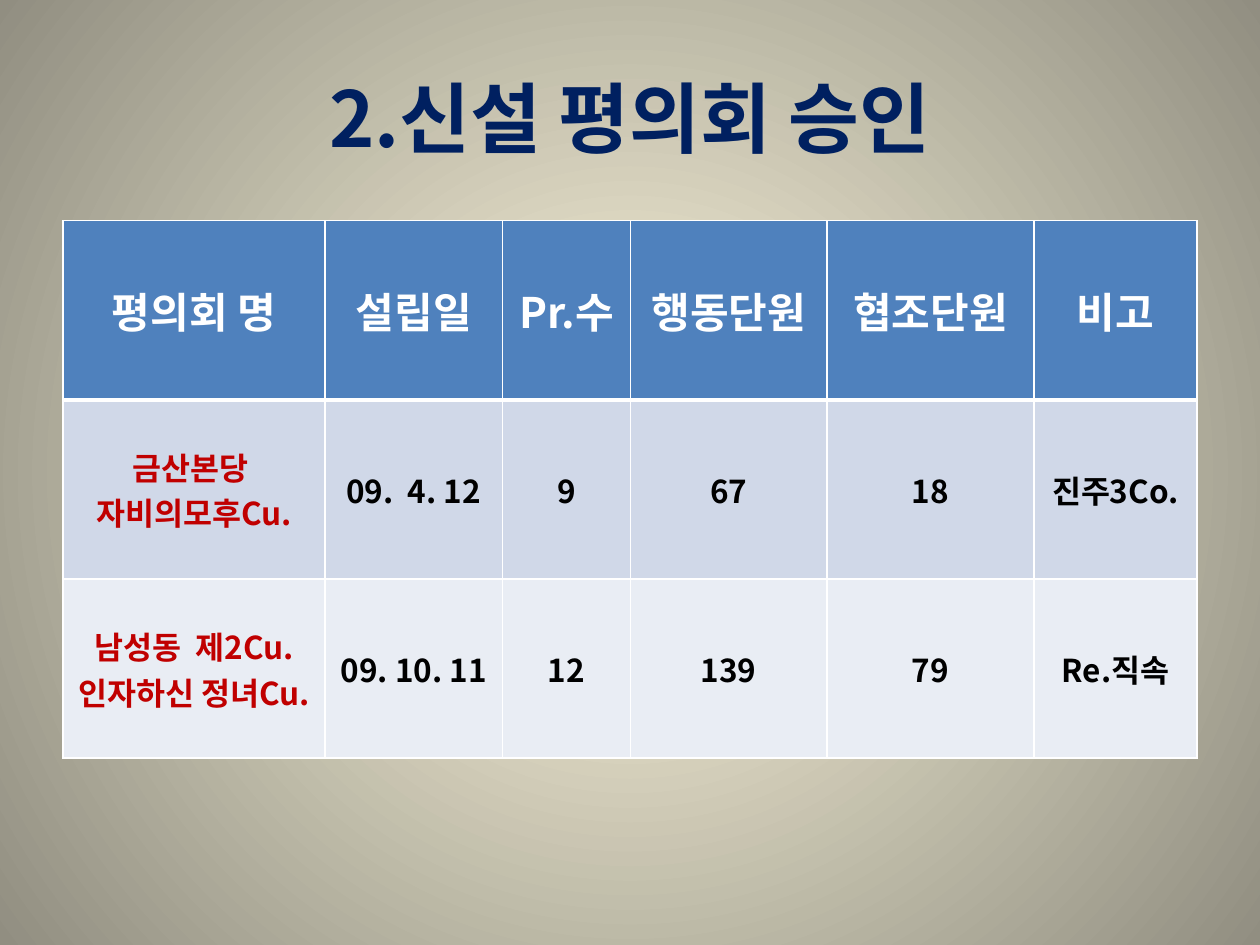
from lxml import etree
from pptx import Presentation
from pptx.dml.color import RGBColor as Rgb
from pptx.enum.text import MSO_ANCHOR as Anchor, PP_ALIGN as Align
from pptx.oxml import parse_xml
from pptx.oxml.ns import nsdecls, qn
from pptx.util import Cm, Pt

FONT = "Noto Sans CJK KR"


def color(code):
    return Rgb.from_string(code)


def write(frame, lines, size, code):
    frame.vertical_anchor = Anchor.MIDDLE
    for i, line in enumerate(lines):
        para = frame.add_paragraph() if i else frame.paragraphs[0]
        para.alignment = Align.CENTER
        run = para.add_run()
        run.text = line
        font = run.font
        font.name, font.size, font.bold = FONT, Pt(size), True
        font.color.rgb = color(code)
        etree.SubElement(font._element, qn("a:ea"), typeface=FONT)


deck = Presentation()
deck.slide_width, deck.slide_height = Cm(25.4), Cm(19.05)
slide = deck.slides.add_slide(deck.slide_layouts[5])

back = slide.background.fill
back.gradient()
for stop, code, pos in zip(back.gradient_stops, ["FCF7DD", "918E81"], [0, 1]):
    stop.color.rgb = color(code)
    stop.position = pos
line = slide.element.find(".//" + qn("a:lin"))
line.getparent().replace(line, parse_xml(
    f'<a:path {nsdecls("a")} path="circle">'
    '<a:fillToRect l="50000" t="50000" r="50000" b="50000"/></a:path>'))

title = slide.shapes.title
title.left, title.top, title.width, title.height = Cm(1.27), Cm(0.76), Cm(22.86), Cm(3.18)
write(title.text_frame, ["2.신설 평의회 승인"], 44, "002060")

rows = [
    ["평의회 명", "설립일", "Pr.수", "행동단원", "협조단원", "비고"],
    ["금산본당 \n자비의모후Cu.", "09.  4. 12", "9", "67", "18", "진주3Co."],
    ["남성동  제2Cu.\n인자하신 정녀Cu.", "09. 10. 11", "12", "139", "79", "Re.직속"],
]
fills = ["4F81BD", "D0D8E8", "E9EDF4"]
wides = [5.28, 3.58, 2.58, 3.96, 4.17, 3.29]

grid = slide.shapes.add_table(
    len(rows), len(wides), Cm(1.27), Cm(4.45), Cm(22.86), Cm(10.83)).table
for col, wide in zip(grid.columns, wides):
    col.width = Cm(wide)
for r, row in enumerate(rows):
    grid.rows[r].height = Cm(3.61)
    for c, text in enumerate(row):
        cell = grid.cell(r, c)
        props = cell._tc.get_or_add_tcPr()
        for side in "LRTB":
            thick = (side, r) in [("B", 0), ("T", 1)]
            props.append(parse_xml(
                f'<a:ln{side} {nsdecls("a")} w="{Pt(3 if thick else 1)}">'
                f'<a:solidFill><a:srgbClr val="FFFFFF"/></a:solidFill></a:ln{side}>'))
        cell.fill.solid()
        cell.fill.fore_color.rgb = color(fills[r])
        cell.vertical_anchor = Anchor.MIDDLE
        ink = "FFFFFF" if r == 0 else "C00000" if c == 0 else "000000"
        write(cell.text_frame, text.split("\n"), 18 if r else 24, ink)

deck.save("out.pptx")
